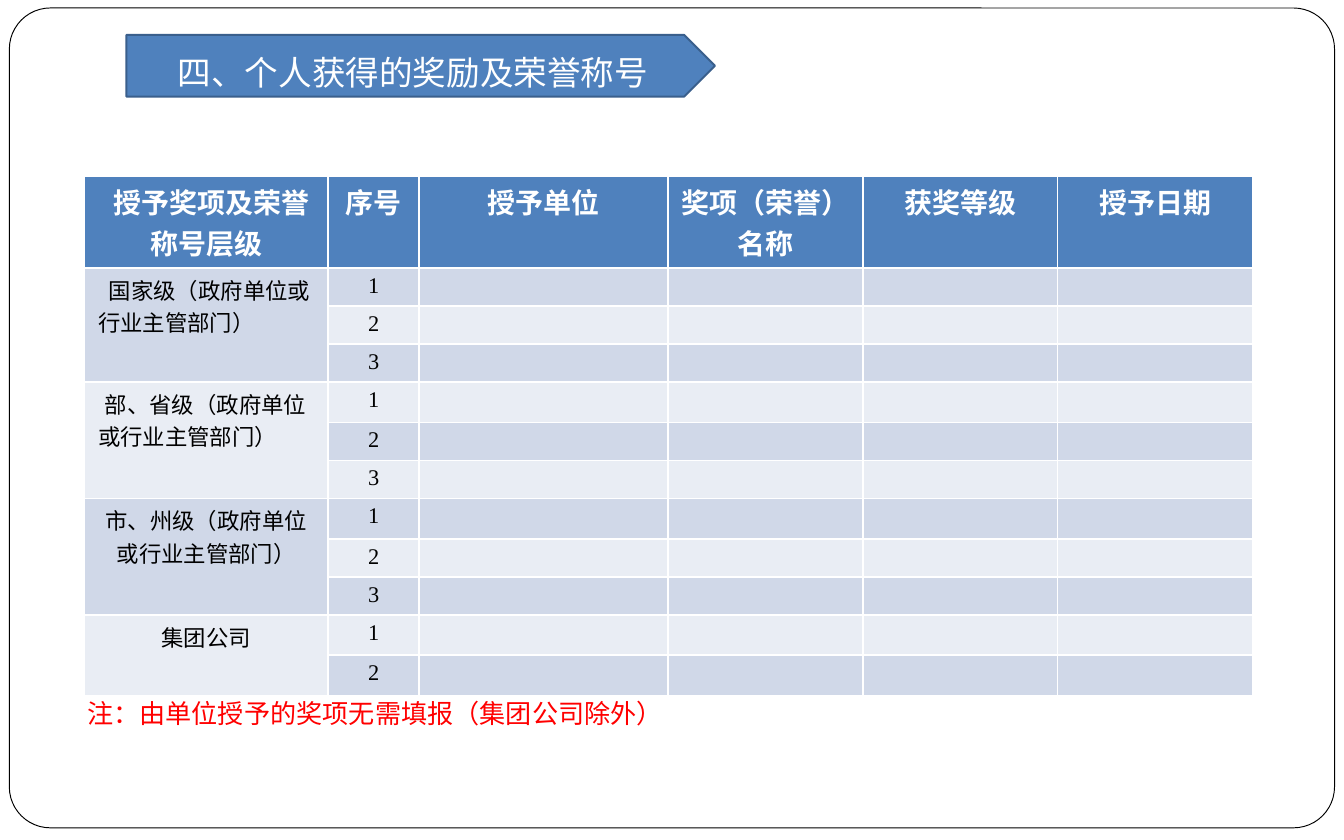
from pptx import Presentation
from pptx import util as u
from pptx.dml.color import RGBColor
from pptx.enum import shapes, text

FONT = "Times New Roman"
WHITE = RGBColor(0xFF, 0xFF, 0xFF)
BLACK = RGBColor(0, 0, 0)
RED = RGBColor(0xFF, 0, 0)
BLUE = RGBColor(0x4F, 0x81, 0xBD)
DARK_BLUE = RGBColor(0x3A, 0x5F, 0x8C)
BANDS = RGBColor(0xD0, 0xD8, 0xE8), RGBColor(0xE9, 0xED, 0xF4)

CENTER, LEFT = text.PP_ALIGN.CENTER, text.PP_ALIGN.LEFT
COLUMNS = [1.81, 0.68, 1.85, 1.45, 1.45, 1.45]
HEADERS = ["授予奖项及荣誉称号层级", "序号", "授予单位", "奖项（荣誉）名称", "获奖等级", "授予日期"]
HEADER_HEIGHT = 0.58
# level, alignment, first-line indent, row heights
LEVELS = [
    ("国家级（政府单位或行业主管部门）", LEFT, 0.08, [0.28, 0.28, 0.28]),
    ("部、省级（政府单位或行业主管部门）", LEFT, 0.05, [0.3, 0.28, 0.28]),
    ("市、州级（政府单位或行业主管部门）", CENTER, 0, [0.3, 0.28, 0.28]),
    ("集团公司", CENTER, 0, [0.3, 0.3]),
]


def box(x, y, w, h):
    return [u.Inches(v) for v in (x, y, w, h)]


def write(tf, words, size, color, align=LEFT, bold=False, indent=0):
    p = tf.paragraphs[0]
    p.alignment = align
    if indent:
        p._p.get_or_add_pPr().set("indent", str(u.Inches(indent)))
    r = p.add_run()
    r.text = words
    r.font.name, r.font.size, r.font.bold = FONT, u.Pt(size), bold
    r.font.color.rgb = color


def add_panel(s, kind, place, fill, line, width):
    sp = s.shapes.add_shape(kind, *box(*place))
    sp.shadow.inherit = False
    sp.fill.solid()
    sp.fill.fore_color.rgb = fill
    sp.line.color.rgb = line
    sp.line.width = u.Pt(width)
    return sp


def add_title(s, words):
    sp = add_panel(s, shapes.MSO_SHAPE.PENTAGON, (0.94, 0.26, 4.38, 0.46), BLUE, DARK_BLUE, 1)
    tf = sp.text_frame
    tf.margin_top, tf.margin_bottom = u.Inches(0.1), 0
    tf.vertical_anchor = text.MSO_ANCHOR.MIDDLE
    write(tf, words, 18, WHITE, CENTER)


def format_cell(cell, fill):
    cell.fill.solid()
    cell.fill.fore_color.rgb = fill
    cell.margin_left = cell.margin_right = u.Inches(0.1)
    cell.margin_top = cell.margin_bottom = u.Inches(0.04)
    # keeps empty cells from stretching their row
    cell.text_frame.paragraphs[0]._p.get_or_add_endParaRPr().set("sz", "1200")


def add_award_table(s):
    heights = [HEADER_HEIGHT] + [h for level in LEVELS for h in level[3]]
    place = box(0.63, 1.31, sum(COLUMNS), sum(heights))
    table = s.shapes.add_table(len(heights), len(COLUMNS), *place).table
    for column, width in zip(table.columns, COLUMNS):
        column.width = u.Inches(width)
    for i, (row, height) in enumerate(zip(table.rows, heights)):
        row.height = u.Inches(height)
        for cell in row.cells:
            format_cell(cell, BANDS[(i - 1) % 2] if i else BLUE)

    for c, words in enumerate(HEADERS):
        write(table.cell(0, c).text_frame, words, 15, WHITE, CENTER, True, 0 if c else 0.08)
    top = 1
    for words, align, indent, rows in LEVELS:
        level = table.cell(top, 0)
        level.merge(table.cell(top + len(rows) - 1, 0))
        write(level.text_frame, words, 12, BLACK, align, indent=indent)
        for n in range(len(rows)):
            write(table.cell(top + n, 1).text_frame, str(n + 1), 12, BLACK, CENTER)
        top += len(rows)


def add_note(s, words):
    tf = s.shapes.add_textbox(*box(0.55, 5.14, 8.44, 0.34)).text_frame
    tf.word_wrap = True
    write(tf, words, 14, RED)


def main():
    prs = Presentation()
    prs.slide_width, prs.slide_height = u.Inches(10), u.Inches(6.25)
    s = prs.slides.add_slide(prs.slide_layouts[6])
    frame = add_panel(s, shapes.MSO_SHAPE.ROUNDED_RECTANGLE, (0.07, 0.06, 9.86, 6.1), WHITE, BLACK, 0.5)
    frame.adjustments[0] = 0.05
    add_title(s, "四、个人获得的奖励及荣誉称号")
    add_award_table(s)
    add_note(s, "注：由单位授予的奖项无需填报（集团公司除外）")
    prs.save("out.pptx")


if __name__ == "__main__":
    main()
